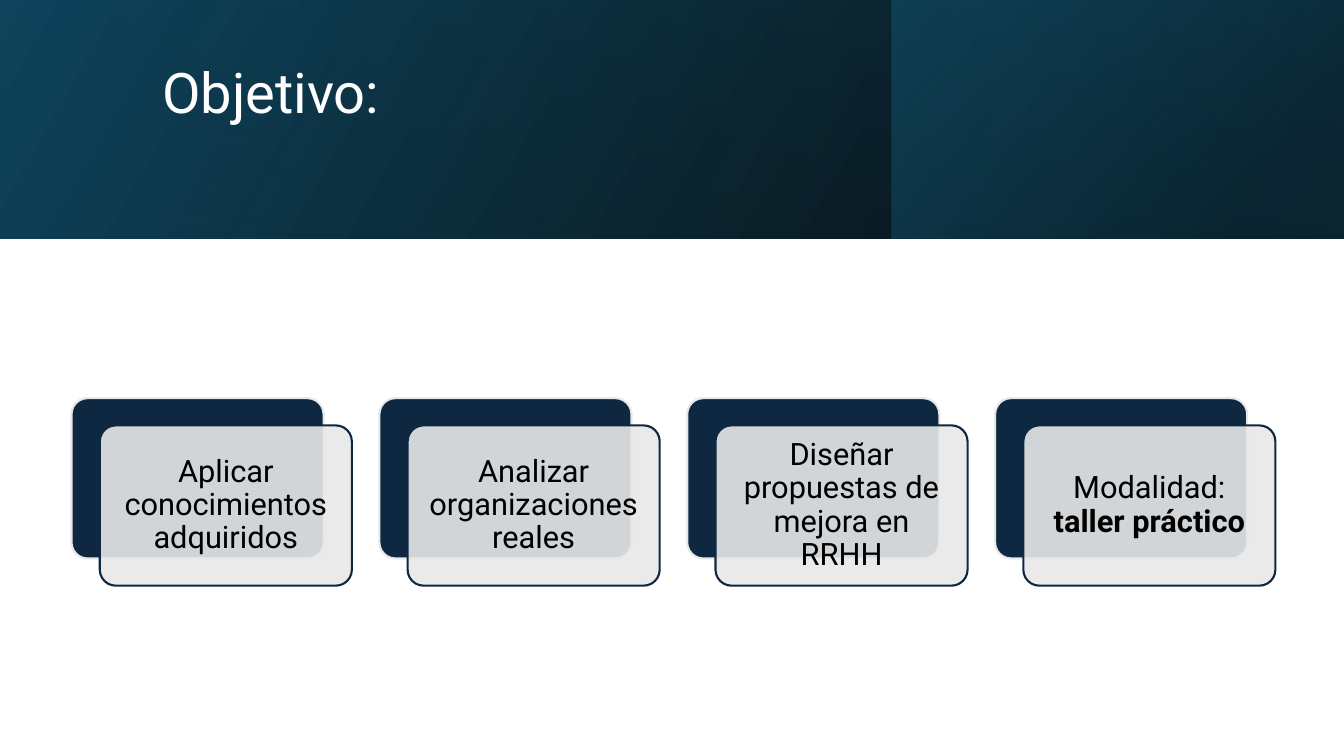
from lxml import etree
from pptx import Presentation
from pptx.dml.color import RGBColor
from pptx.enum.shapes import MSO_SHAPE as SHAPE
from pptx.enum.text import MSO_ANCHOR as ANCHOR, PP_ALIGN as ALIGN
from pptx.oxml.ns import qn
from pptx.util import Inches, Pt

NAVY, GREY, TEAL, BLACK, WHITE = "0E2841", "E8E8E8", "104862", "000000", "FFFFFF"
CARDS = [
    [("Aplicar conocimientos adquiridos", False)],
    [("Analizar organizaciones reales", False)],
    [("Diseñar propuestas de mejora en RRHH", False)],
    [("Modalidad: ", False), ("taller práctico", True)],
]


def rgb(value):
    return RGBColor.from_string(value)


def set_alpha(clr, percent):
    etree.SubElement(clr, qn("a:alpha")).set("val", str(percent * 1000))


def add_text(p, text, size=22, color=BLACK, bold=False):
    r = p.add_run()
    r.text = text
    r.font.name = "Roboto"
    r.font.size = Pt(size)
    r.font.bold = bold
    r.font.color.rgb = rgb(color)


def add_box(s, kind, x, y, w, h):
    sp = s.shapes.add_shape(kind, Inches(x), Inches(y), Inches(w), Inches(h))
    sp.shadow.inherit = False
    return sp


def add_gradient(s, x, y, w, h, angle, stops):
    sp = add_box(s, SHAPE.RECTANGLE, x, y, w, h)
    sp.line.fill.background()
    sp.fill.gradient()
    sp.fill.gradient_angle = 360 - angle
    for stop, (position, color, alpha) in zip(sp.fill.gradient_stops, stops):
        stop.position = position
        stop.color.rgb = rgb(color)
    clrs = sp.fill._xPr.iter(qn("a:srgbClr"))
    for clr, (position, color, alpha) in zip(clrs, stops):
        set_alpha(clr, alpha)


def add_header(s, x, y, w, h):
    add_gradient(s, x, y, w, h, 30, [(0, TEAL, 100), (1, BLACK, 96)])
    add_gradient(s, x + 8.84, y, w - 8.84, h, 40,
                 [(0, "156082", 48), (0.81, "0B3041", 68)])
    add_gradient(s, x, y, w, h, 100, [(0, TEAL, 16), (1, BLACK, 5)])
    title = s.shapes.title
    title.left, title.top = Inches(x + 1.51), Inches(y + 0.38)
    title.width, title.height = Inches(10.63), Inches(1.72)
    s.shapes._spTree.append(title._element)
    tf = title.text_frame
    tf.vertical_anchor = ANCHOR.MIDDLE
    tf.margin_bottom = Inches(0.63)
    p = tf.paragraphs[0]
    p.alignment = ALIGN.LEFT
    p.line_spacing = 0.9
    add_text(p, "Objetivo:", size=40, color=WHITE)


def add_panel(s, x, y, w, h, fill, line):
    sp = add_box(s, SHAPE.ROUNDED_RECTANGLE, x, y, w, h)
    sp.adjustments[0] = 0.1
    sp.fill.solid()
    sp.fill.fore_color.rgb = rgb(fill)
    sp.line.color.rgb = rgb(line)
    sp.line.width = Pt(1.5)
    return sp


def add_card(s, x, y, w, h, runs):
    add_panel(s, x, y, w, h, NAVY, GREY)
    sp = add_panel(s, x + 0.28, y + 0.27, w, h, GREY, NAVY)
    set_alpha(sp.fill._xPr.find(qn("a:solidFill"))[0], 90)
    tf = sp.text_frame
    tf.word_wrap = True
    tf.vertical_anchor = ANCHOR.MIDDLE
    tf.margin_left = tf.margin_right = Inches(0.09)
    tf.margin_top = tf.margin_bottom = Inches(0.09)
    p = tf.paragraphs[0]
    p.alignment = ALIGN.CENTER
    p.line_spacing = 0.9
    for text, bold in runs:
        add_text(p, text, bold=bold)


def add_cards(s, x, y, w):
    card_w, card_h, shift = 2.5, 1.59, 0.28
    pitch = (w - card_w - shift) / (len(CARDS) - 1)
    for i, runs in enumerate(CARDS):
        add_card(s, x + i * pitch, y, card_w, card_h, runs)


def main():
    prs = Presentation()
    prs.slide_width, prs.slide_height = Inches(13.33), Inches(7.5)
    s = prs.slides.add_slide(prs.slide_layouts[5])
    add_header(s, 0, 0, 13.33, 2.37)
    add_cards(s, 0.71, 3.95, 11.94)
    prs.save("out.pptx")


if __name__ == "__main__":
    main()
